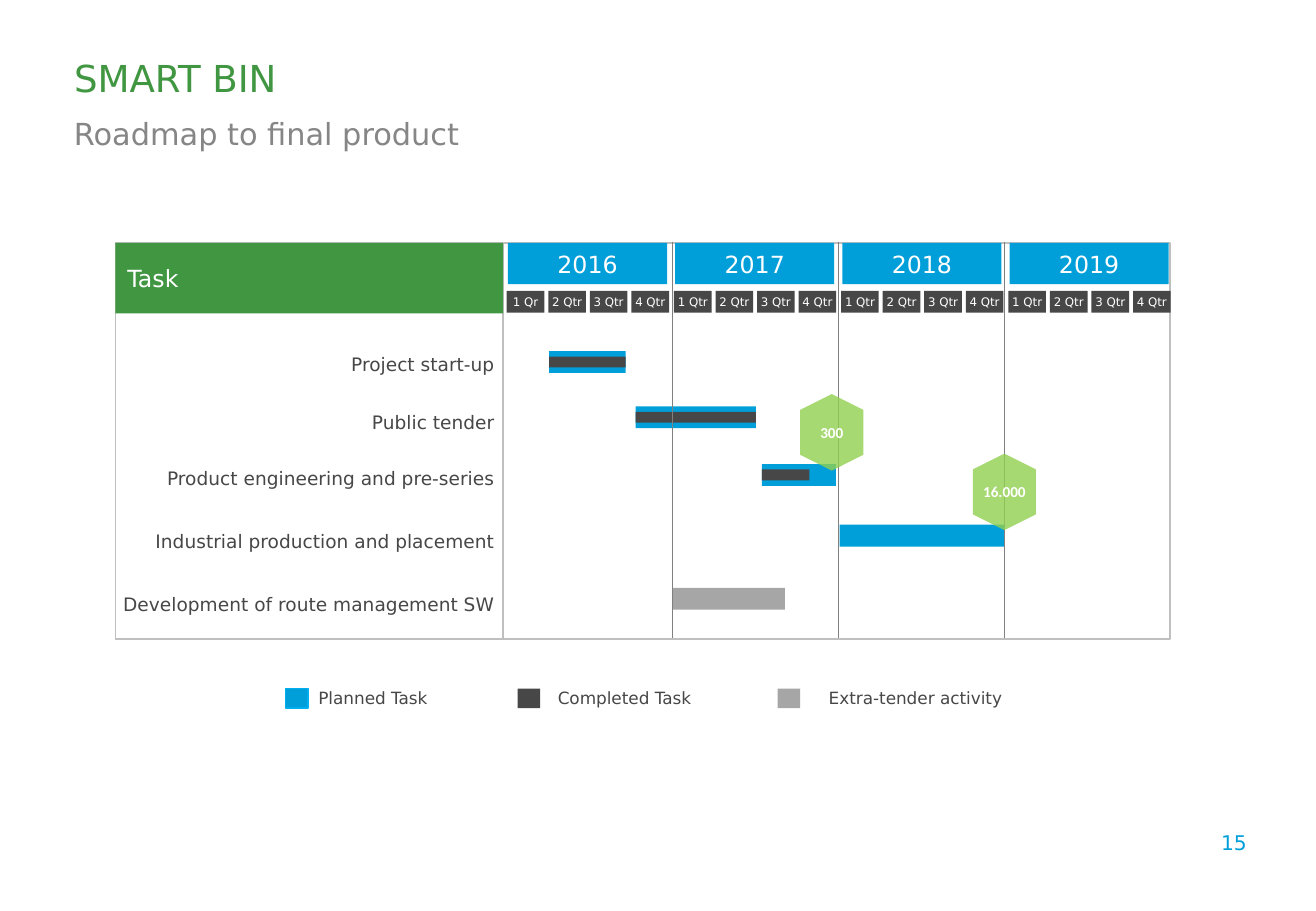
from dataclasses import dataclass

from lxml import etree
from pptx import Presentation
from pptx.dml.color import RGBColor
from pptx.enum.shapes import MSO_CONNECTOR, MSO_SHAPE
from pptx.enum.text import MSO_ANCHOR, MSO_AUTO_SIZE, PP_ALIGN
from pptx.oxml.ns import qn
from pptx.util import Inches, Pt

RECT, HEXAGON = MSO_SHAPE.RECTANGLE, MSO_SHAPE.HEXAGON
STRAIGHT = MSO_CONNECTOR.STRAIGHT
TOP, MIDDLE = MSO_ANCHOR.TOP, MSO_ANCHOR.MIDDLE
LEFT, CENTER, RIGHT = PP_ALIGN.LEFT, PP_ALIGN.CENTER, PP_ALIGN.RIGHT
NO_FIT = MSO_AUTO_SIZE.NONE


@dataclass(frozen=True)
class Theme:
    """Colours, fonts and type sizes of the deck."""
    green: str = "409641"
    blue: str = "009FDA"
    blue_edge: str = "01AEF0"
    dark: str = "474747"
    extra: str = "A6A6A6"
    frame: str = "BFBFBF"
    divider: str = "808080"
    subtitle: str = "868686"
    milestone: str = "92D050"
    white: str = "FFFFFF"
    font: str = "DejaVu Sans"
    milestone_font: str = "Calibri"
    title_size: int = 22
    subtitle_size: int = 18
    header_size: int = 14
    number_size: int = 12
    task_size: int = 11
    legend_size: int = 10
    milestone_size: int = 9
    quarter_size: int = 7


THEME = Theme()
CELL = Inches(0.1)
COLUMNS, ROWS = 108.3, 75
YEAR_STEP, QUARTER_STEP, DIVIDER_STEP = 13.76, 3.42, 13.7
BAR_HEIGHT = 1.8

TASKS = [
    ("Project start-up", 27.7, 45.2, 28.9, 6.3, 6.3, THEME.blue),
    ("Public tender", 32.5, 52.3, 33.45, 9.9, 9.9, THEME.blue),
    ("Product engineering and pre-series", 37.1, 62.7, 38.2, 6.1, 3.9, THEME.blue),
    ("Industrial production and placement", 42.3, 69.1, 43.2, 13.6, 0, THEME.blue),
    ("Development of route management SW", 47.5, 55.4, 48.4, 9.2, 0, THEME.extra),
]
MILESTONES = [("300", 65.3, 33), ("16.000", 79.5, 37.9)]
LEGEND = [
    ("Planned Task", 23.5, 25.7, THEME.blue, THEME.blue_edge),
    ("Completed Task", 42.6, 45.4, THEME.dark, None),
    ("Extra-tender activity", 64, 67.7, THEME.extra, None),
]


class RoadmapPage:
    """A slide on a grid of tenth-inch columns and rows."""

    def __init__(self, deck, theme):
        """Add a title-only slide to the deck."""
        self.theme = theme
        self.page = deck.slides.add_slide(deck.slide_layouts[5])

    def area(self, *cells):
        """Turn columns and rows into lengths."""
        return [round(cell * CELL) for cell in cells]

    def fill_text(self, box, text, size, color, align=LEFT, anchor=TOP,
                  insets=(1, 0.5), font=None, bold=False, spacing=None):
        """Put one styled paragraph into a shape."""
        frame = box.text_frame
        frame.word_wrap = True
        frame.auto_size = NO_FIT
        frame.vertical_anchor = anchor
        side, edge = self.area(*insets)
        frame.margin_left = frame.margin_right = side
        frame.margin_top = frame.margin_bottom = edge
        para = frame.paragraphs[0]
        para.alignment = align
        if spacing:
            para.line_spacing = Pt(spacing)
        span = para.add_run()
        span.text = text
        span.font.name = font or self.theme.font
        span.font.size = Pt(size)
        span.font.bold = bold
        span.font.color.rgb = RGBColor.from_string(color)

    def title(self, cells, text):
        """Place and fill the title placeholder."""
        box = self.page.shapes.title
        box.left, box.top, box.width, box.height = self.area(*cells)
        self.fill_text(box, text, self.theme.title_size, self.theme.green)

    def text(self, cells, text, size, color, **style):
        """Add a text box."""
        box = self.page.shapes.add_textbox(*self.area(*cells))
        self.fill_text(box, text, size, color, **style)

    def block(self, cells, fill=None, line=None, weight=1, preset=RECT):
        """Add a flat preset shape."""
        box = self.page.shapes.add_shape(preset, *self.area(*cells))
        box.shadow.inherit = False
        if fill:
            box.fill.solid()
            box.fill.fore_color.rgb = RGBColor.from_string(fill)
        else:
            box.fill.background()
        if line:
            box.line.color.rgb = RGBColor.from_string(line)
            box.line.width = Pt(weight)
        else:
            box.line.fill.background()
        return box

    def header(self, cells, text, fill, size, align=CENTER, insets=(1, 0.5)):
        """Add a filled block with white text."""
        self.fill_text(self.block(cells, fill), text, size, self.theme.white,
                       align, MIDDLE, insets)

    def divider(self, column, top, bottom):
        """Add a thin vertical line."""
        line = self.page.shapes.add_connector(
            STRAIGHT, *self.area(column, top, column, bottom))
        line.line.color.rgb = RGBColor.from_string(self.theme.divider)
        line.line.width = Pt(0.5)
        etree.SubElement(line.element.spPr, qn("a:effectLst"))

    def milestone(self, cells, text):
        """Add an upright translucent hexagon with level text."""
        box = self.block(cells, self.theme.milestone, preset=HEXAGON)
        box.rotation = 90
        color = box.element.spPr.find(".//" + qn("a:srgbClr"))
        etree.SubElement(color, qn("a:alpha"), val="80000")
        self.fill_text(box, text, self.theme.milestone_size, self.theme.white, CENTER,
                       MIDDLE, (0, 0), self.theme.milestone_font, True)
        box.element.txBody.bodyPr.set("vert", "vert270")


def main():
    """Build the roadmap slide and save it."""
    deck = Presentation()
    deck.slide_width = round(COLUMNS * CELL)
    deck.slide_height = round(ROWS * CELL)
    roadmap = RoadmapPage(deck, THEME)

    roadmap.title((5.1, 4.1, 81.1, 4.7), "SMART BIN")
    roadmap.text((5.1, 9, 81.1, 4), "Roadmap to final product",
                 THEME.subtitle_size, THEME.subtitle)

    for width in (86.8, 31.9):
        roadmap.block((9.5, 20, width, 32.6), line=THEME.frame)
    roadmap.header((9.5, 20, 31.9, 5.8), "Task", THEME.green, THEME.header_size, LEFT)

    for label, label_top, start, top, planned, completed, color in TASKS:
        roadmap.text((9.5, label_top, 31.2, 3.7), label, THEME.task_size, THEME.dark,
                     align=RIGHT, insets=(0, 0.4), spacing=20)
        roadmap.block((start, top, planned, BAR_HEIGHT), color)
        if completed:
            roadmap.block((start, top + 0.45, completed, 0.9), THEME.dark)

    for year in range(4):
        roadmap.header((41.8 + year * YEAR_STEP, 20, 13.1, 3.4), str(2016 + year),
                       THEME.blue, THEME.header_size)
        for quarter in range(4):
            unit = "Qr" if year == quarter == 0 else "Qtr"
            left = 41.7 + year * YEAR_STEP + quarter * QUARTER_STEP
            roadmap.header((left, 23.95, 3.1, 1.8), f"{quarter + 1} {unit}",
                           THEME.dark, THEME.quarter_size, insets=(0.2, 0.4))
    for year in range(3):
        roadmap.divider(55.3 + year * DIVIDER_STEP, 19.9, 52.5)

    for text, left, top in MILESTONES:
        roadmap.milestone((left, top, 6.3, 5.2), text)

    for label, swatch, left, color, edge in LEGEND:
        roadmap.block((swatch, 56.7, 1.85, 1.6), color, edge, 0.75)
        roadmap.text((left, 56.5, 17.2, 1.9), label, THEME.legend_size, THEME.dark,
                     anchor=MIDDLE, insets=(0.5, 0))

    roadmap.text((80.6, 67.9, 23, 4.5), "15", THEME.number_size, THEME.blue, align=RIGHT)
    deck.save("out.pptx")


if __name__ == "__main__":
    main()
